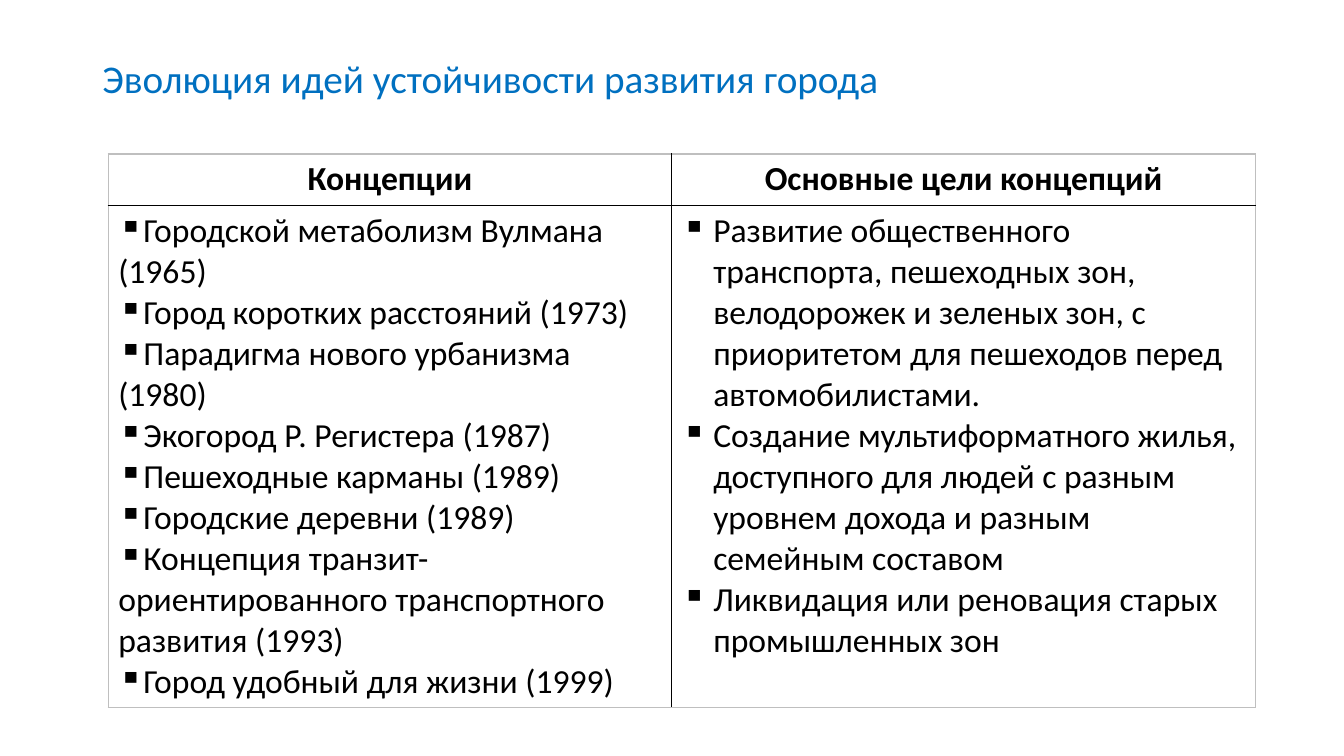
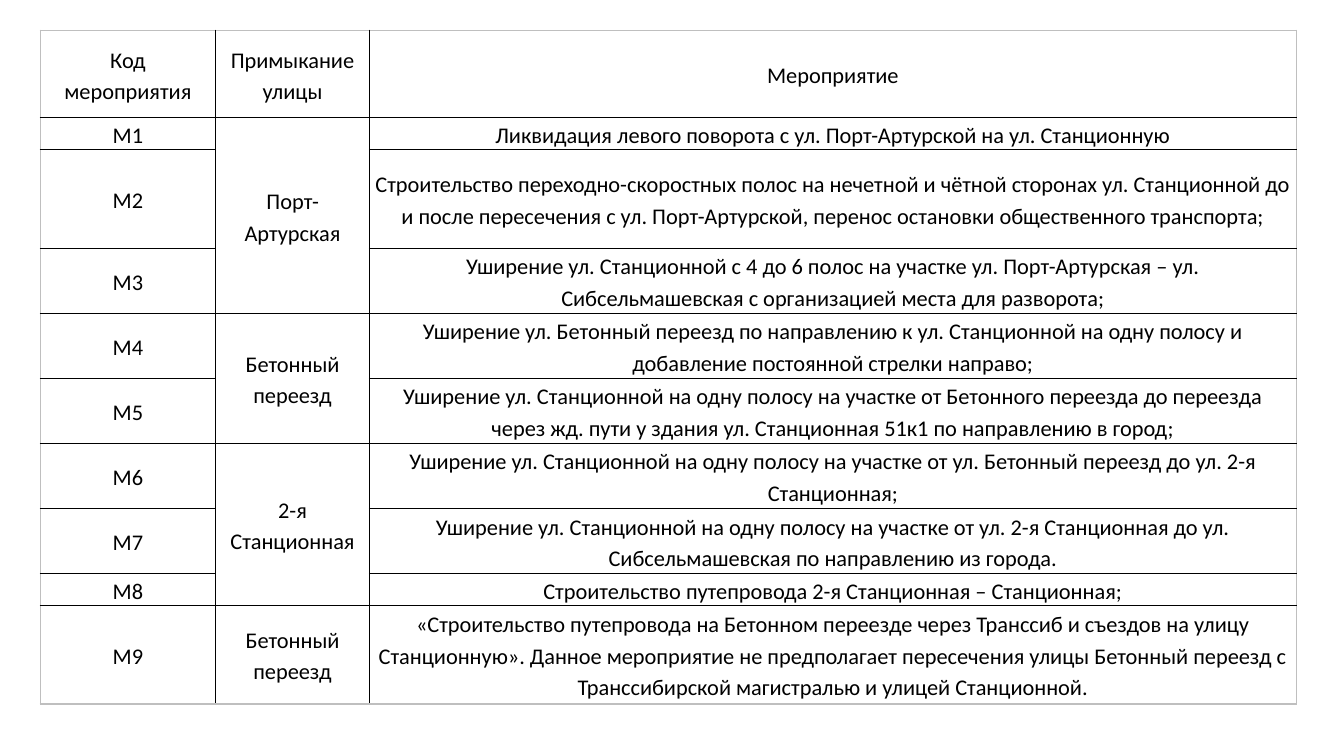
from pptx import Presentation
from pptx import util as u
from pptx.dml.color import RGBColor
from pptx.enum import text
from pptx.oxml.ns import qn
from lxml import etree

FONT = "Calibri"
BLUE, BLACK, WHITE, GRAY = "0070C0", "000000", "FFFFFF", "BFBFBF"
TITLE_ONLY, BLANK = 5, 6

CONCEPTS = [
    "Городской метаболизм Вулмана (1965)",
    "Город коротких расстояний (1973)",
    "Парадигма нового урбанизма (1980)",
    "Экогород Р. Регистера (1987)",
    "Пешеходные карманы (1989)",
    "Городские деревни (1989)",
    "Концепция транзит-ориентированного транспортного развития (1993)",
    "Город удобный для жизни (1999)",
]
GOALS = [
    "Развитие общественного транспорта, пешеходных зон, велодорожек и зеленых зон, "
    "с приоритетом для пешеходов перед автомобилистами.",
    "Создание мультиформатного жилья, доступного для людей с разным уровнем дохода "
    "и разным семейным составом",
    "Ликвидация или реновация старых промышленных зон",
]
MEASURE_HEADERS = ["Код мероприятия", "Примыкание улицы", "Мероприятие"]
STREETS = [
    ("Порт-Артурская", [
        (22.3, "Ликвидация левого поворота с ул. Порт-Артурской на ул. Станционную"),
        (70.6, "Строительство переходно-скоростных полос на нечетной и чётной сторонах "
               "ул. Станционной до и после пересечения с ул. Порт-Артурской, "
               "перенос остановки общественного транспорта;"),
        (46.5, "Уширение ул. Станционной с 4 до 6 полос на участке ул. Порт-Артурская – "
               "ул. Сибсельмашевская с организацией места для разворота;"),
    ]),
    ("Бетонный переезд", [
        (46.5, "Уширение ул. Бетонный переезд по направлению к ул. Станционной "
               "на одну полосу и добавление постоянной стрелки направо;"),
        (46.5, "Уширение ул. Станционной на одну полосу на участке от Бетонного переезда "
               "до переезда через жд. пути у здания ул. Станционная 51к1 "
               "по направлению в город;"),
    ]),
    ("2-я Станционная", [
        (46.5, "Уширение ул. Станционной на одну полосу на участке "
               "от ул. Бетонный переезд до ул. 2-я Станционная;"),
        (46.5, "Уширение ул. Станционной на одну полосу на участке "
               "от ул. 2-я Станционная до ул. Сибсельмашевская "
               "по направлению из города."),
        (22.3, "Строительство путепровода 2-я Станционная – Станционная;"),
    ]),
    ("Бетонный переезд", [
        (70.6, "«Строительство путепровода на Бетонном переезде через Транссиб и съездов "
               "на улицу Станционную». Данное мероприятие не предполагает пересечения "
               "улицы Бетонный переезд с Транссибирской магистралью и улицей Станционной."),
    ]),
]


def color(value):
    return RGBColor.from_string(value)


def add_run(paragraph, content, size, fill=BLACK, bold=False):
    run = paragraph.add_run()
    run.text = content
    run.font.name = FONT
    run.font.size = u.Pt(size)
    run.font.bold = bold
    run.font.color.rgb = color(fill)


def add_title(slide, content):
    title = slide.shapes.title
    title.left, title.top = u.Pt(66), u.Pt(28.8)
    title.width, title.height = u.Pt(828), u.Pt(57.6)
    frame = title.text_frame
    frame.auto_size = text.MSO_AUTO_SIZE.NONE
    frame.vertical_anchor = text.MSO_ANCHOR.MIDDLE
    paragraph = frame.paragraphs[0]
    paragraph.alignment = text.PP_ALIGN.LEFT
    paragraph.line_spacing = 0.9
    add_run(paragraph, content, 28, BLUE)


def set_borders(cell, outer_sides):
    properties = cell._tc.get_or_add_tcPr()
    for side in "LRTB":
        line = etree.SubElement(properties, qn(f"a:ln{side}"), w=str(u.Pt(1)))
        fill = etree.SubElement(line, qn("a:solidFill"))
        shade = GRAY if side in outer_sides else BLACK
        etree.SubElement(fill, qn("a:srgbClr"), val=shade)


def add_table(slide, left, top, widths, heights):
    frame = slide.shapes.add_table(len(heights), len(widths), u.Pt(left), u.Pt(top),
                                   u.Pt(sum(widths)), u.Pt(sum(heights)))
    table = frame.table
    table.first_row = table.horz_banding = False
    for column, width in zip(table.columns, widths):
        column.width = u.Pt(width)
    for row, height in zip(table.rows, heights):
        row.height = u.Pt(height)
    for i in range(len(heights)):
        for j in range(len(widths)):
            edges = {"L": j == 0, "R": j == len(widths) - 1,
                     "T": i == 0, "B": i == len(heights) - 1}
            cell = table.cell(i, j)
            set_borders(cell, [side for side, outer in edges.items() if outer])
            cell.fill.solid()
            cell.fill.fore_color.rgb = color(WHITE)
    return table


def fill_centered(cell, content, size, bold=False):
    paragraph = cell.text_frame.paragraphs[0]
    paragraph.alignment = text.PP_ALIGN.CENTER
    add_run(paragraph, content, size, bold=bold)
    return paragraph


def fill_measure(cell, content):
    cell.vertical_anchor = text.MSO_ANCHOR.MIDDLE
    cell.margin_left = cell.margin_right = u.Pt(3.6)
    cell.margin_top = cell.margin_bottom = 0
    fill_centered(cell, content, 16).line_spacing = 1.15


def fill_bullets(cell, items, indent):
    frame = cell.text_frame
    for index, item in enumerate(items):
        paragraph = frame.add_paragraph() if index else frame.paragraphs[0]
        properties = paragraph._p.get_or_add_pPr()
        properties.set("marL", str(u.Pt(indent)))
        properties.set("indent", str(-u.Pt(indent)))
        etree.SubElement(properties, qn("a:buChar"), char="▪")
        add_run(paragraph, item, 24)


def build_concepts(presentation):
    slide = presentation.slides.add_slide(presentation.slide_layouts[TITLE_ONLY])
    add_title(slide, "Эволюция идей устойчивости развития города")
    table = add_table(slide, 77.3, 110, [402.5, 417], [36.5, 358.5])
    columns = [("Концепции", CONCEPTS, 0), ("Основные цели концепций", GOALS, 22.5)]
    for j, (header, items, indent) in enumerate(columns):
        fill_centered(table.cell(0, j), header, 24, bold=True)
        fill_bullets(table.cell(1, j), items, indent)


def build_measures(presentation):
    slide = presentation.slides.add_slide(presentation.slide_layouts[BLANK])
    heights = [62.6] + [height for _, measures in STREETS for height, _ in measures]
    table = add_table(slide, 28.8, 21.6, [125.2, 110, 662], heights)
    for j, header in enumerate(MEASURE_HEADERS):
        fill_measure(table.cell(0, j), header)
    row = 1
    for street, measures in STREETS:
        street_cell = table.cell(row, 1)
        if len(measures) > 1:
            street_cell.merge(table.cell(row + len(measures) - 1, 1))
        fill_measure(street_cell, street)
        for _, measure in measures:
            fill_measure(table.cell(row, 0), f"М{row}")
            fill_measure(table.cell(row, 2), measure)
            row += 1


def main():
    presentation = Presentation()
    presentation.slide_width, presentation.slide_height = u.Pt(960), u.Pt(540)
    build_concepts(presentation)
    build_measures(presentation)
    presentation.save("out.pptx")


if __name__ == "__main__":
    main()
